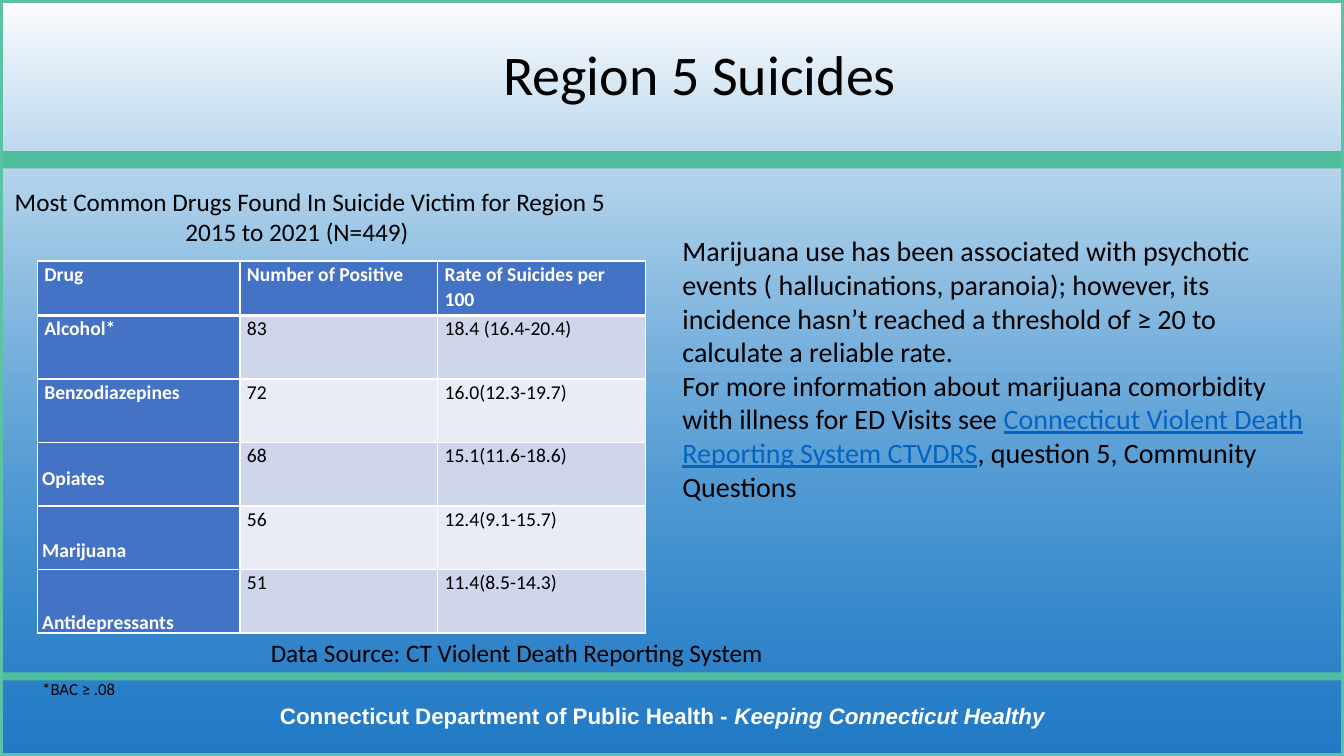
from lxml.etree import SubElement
from pptx import Presentation
from pptx.dml.color import RGBColor
from pptx.enum.shapes import MSO_SHAPE
from pptx.enum.text import MSO_ANCHOR, PP_ALIGN
from pptx.oxml import parse_xml
from pptx.oxml.ns import nsdecls, qn
from pptx.util import Inches, Pt

BLACK = RGBColor(0x00, 0x00, 0x00)
WHITE = RGBColor(0xFF, 0xFF, 0xFF)
BLUE = RGBColor(0x44, 0x72, 0xC4)
DEEP_BLUE = RGBColor(0x00, 0x82, 0xC8)
GREEN = RGBColor(0x4D, 0xBD, 0x9C)
FRAME_GREEN = RGBColor(0x5B, 0xC2, 0xA4)
LINK_BLUE = RGBColor(0x05, 0x63, 0xC1)
BANDS = [RGBColor(0xCF, 0xD5, 0xEA), RGBColor(0xE9, 0xEB, 0xF5)]

# Content: a paragraph is a list of (text, format) spans
TITLE = "Region 5 Suicides"
CAPTION = [[("Most Common Drugs Found In Suicide Victim for Region 5", {})],
           [("2015 to 2021 (N=449)", {})]]
DRUG_ROWS = [
    ("Drug", "Number of Positive", "Rate of Suicides per 100"),
    ("Alcohol*", "83", "18.4 (16.4-20.4)"),
    ("Benzodiazepines", "72", "16.0(12.3-19.7)"),
    ("", "68", "15.1(11.6-18.6)"),
    ("", "56", "12.4(9.1-15.7)"),
    ("", "51", "11.4(8.5-14.3)"),
]
LOWER_DRUGS = ["Opiates", "Marijuana", "Antidepressants"]
FOOTNOTE = "*BAC ≥ .08"
COMMENTARY = [
    [("Marijuana use has been associated with psychotic events ( hallucinations, paranoia); "
      "however, its incidence hasn’t reached a threshold of ≥ 20 to calculate a reliable rate.", {})],
    [("For more information about marijuana comorbidity with illness for ED Visits see ", {}),
     ("Connecticut Violent Death Reporting System CTVDRS",
      {"color": LINK_BLUE, "underline": True}),
     (", question 5, Community Questions", {})],
]
DATA_SOURCE = [[("Data Source: CT Violent Death Reporting System", {})]]
FOOTER = [[("Connecticut Department of Public Health - ", {}),
           ("Keeping Connecticut Healthy", {"italic": True})]]

COLUMN_WIDTHS = [2.01, 1.96, 2.06]
HEADER_HEIGHT, ROW_HEIGHT = 0.54, 0.63

deck = Presentation()
deck.slide_width, deck.slide_height = Inches(13.33), Inches(7.5)
page = deck.slides.add_slide(deck.slide_layouts[5])
page.background.fill.solid()
page.background.fill.fore_color.rgb = BLUE


def add_span(para, text, size=14, color=BLACK, name="Calibri", bold=False,
             italic=False, underline=False):
    span = para.add_run()
    span.text = text
    font = span.font
    font.size, font.name, font.color.rgb = Pt(size), name, color
    font.bold, font.italic, font.underline = bold, italic, underline


def add_text(left, top, width, height, paragraphs, align=PP_ALIGN.LEFT, **style):
    box = page.shapes.add_textbox(Inches(left), Inches(top), Inches(width), Inches(height))
    box.text_frame.word_wrap = True
    for index, spans in enumerate(paragraphs):
        para = box.text_frame.add_paragraph() if index else box.text_frame.paragraphs[0]
        para.alignment = align
        for text, extra in spans:
            add_span(para, text, **{**style, **extra})
    return box


def add_rectangle(top, height):
    shape = page.shapes.add_shape(MSO_SHAPE.RECTANGLE, 0, Inches(top),
                                  deck.slide_width, Inches(height))
    shape.shadow.inherit = False
    shape.line.fill.background()
    return shape


def set_borders(cell, **widths):
    properties = cell._tc.get_or_add_tcPr()
    for index, side in enumerate("LRTB"):
        width = Pt(widths.get(side, 1))
        properties.insert(index, parse_xml(
            f'<a:ln{side} {nsdecls("a")} w="{width}"><a:solidFill>'
            f'<a:srgbClr val="{WHITE}"/></a:solidFill></a:ln{side}>'))


# Backdrop: half-transparent blue at the bottom rising to white
backdrop = add_rectangle(0, 7.5)
backdrop.fill.gradient()
backdrop.fill.gradient_angle = 90
for stop, color, position in zip(backdrop.fill.gradient_stops, (DEEP_BLUE, WHITE), (0, 1)):
    stop.color.rgb, stop.position = color, position
bottom_color = backdrop.element.find(".//" + qn("a:srgbClr"))
SubElement(bottom_color, qn("a:alpha")).set("val", "50000")

# Green bands, footer and frame
for top, height in ((6.67, 0.08), (1.5, 0.17)):
    band = add_rectangle(top, height)
    band.fill.solid()
    band.fill.fore_color.rgb = GREEN
add_text(0.68, 6.92, 11.78, 0.37, FOOTER, PP_ALIGN.CENTER,
         size=16, name="Arial", color=WHITE, bold=True)
frame = add_rectangle(0, 7.5)
frame.fill.background()
frame.line.color.rgb, frame.line.width = FRAME_GREEN, Pt(4.5)

# Title, brought in front of the backdrop
title = page.shapes.title
title.element.getparent().append(title.element)
title.left, title.top, title.width, title.height = map(Inches, (2.21, 0.03, 9.46, 1.47))
title.text_frame.vertical_anchor = MSO_ANCHOR.MIDDLE
title_para = title.text_frame.paragraphs[0]
title_para.alignment, title_para.line_spacing = PP_ALIGN.CENTER, 0.9
add_span(title_para, TITLE, size=40)

add_text(1.12, 6.27, 8.01, 0.4, DATA_SOURCE, PP_ALIGN.CENTER, size=18)

# Drug table
table = page.shapes.add_table(
    len(DRUG_ROWS), len(COLUMN_WIDTHS), Inches(0.37), Inches(2.59), Inches(sum(COLUMN_WIDTHS)),
    Inches(HEADER_HEIGHT + ROW_HEIGHT * (len(DRUG_ROWS) - 1))).table
for column, width in zip(table.columns, COLUMN_WIDTHS):
    column.width = Inches(width)
for r, values in enumerate(DRUG_ROWS):
    table.rows[r].height = Inches(ROW_HEIGHT if r else HEADER_HEIGHT)
    for c, value in enumerate(values):
        cell = table.cell(r, c)
        heading = r == 0 or c == 0
        cell.margin_left = cell.margin_right = Inches(0.07)
        cell.margin_top = cell.margin_bottom = 0
        cell.fill.solid()
        cell.fill.fore_color.rgb = BLUE if heading else BANDS[(r - 1) % 2]
        set_borders(cell, T=3 if r == 1 else 1, B=3 if r == 0 else 1)
        para = cell.text_frame.paragraphs[0]
        para.line_spacing = 1.07
        if value:
            add_span(para, value, color=WHITE if heading else BLACK, bold=heading)

# Caption above the table, its first line nudged right
caption = add_text(-0.34, 1.8, 6.57, 0.71, CAPTION, PP_ALIGN.CENTER, size=18)
caption.text_frame.paragraphs[0]._p.get_or_add_pPr().set("marL", str(Inches(0.26)))

add_text(6.67, 2.27, 6.36, 2.79, COMMENTARY, size=20)

# Lower drug names and footnote, spaced down the first column
labels = [[(drug, {"color": WHITE, "bold": True})] for drug in LOWER_DRUGS]
labels.append([(FOOTNOTE, {"size": 12})])
label_box = add_text(0.32, 4.56, 1.72, 2.43, labels)
for index, para in enumerate(label_box.text_frame.paragraphs):
    para.line_spacing = 1.07
    if index:
        para.space_before = Pt(33.5 if index < len(LOWER_DRUGS) else 31)

deck.save("out.pptx")
